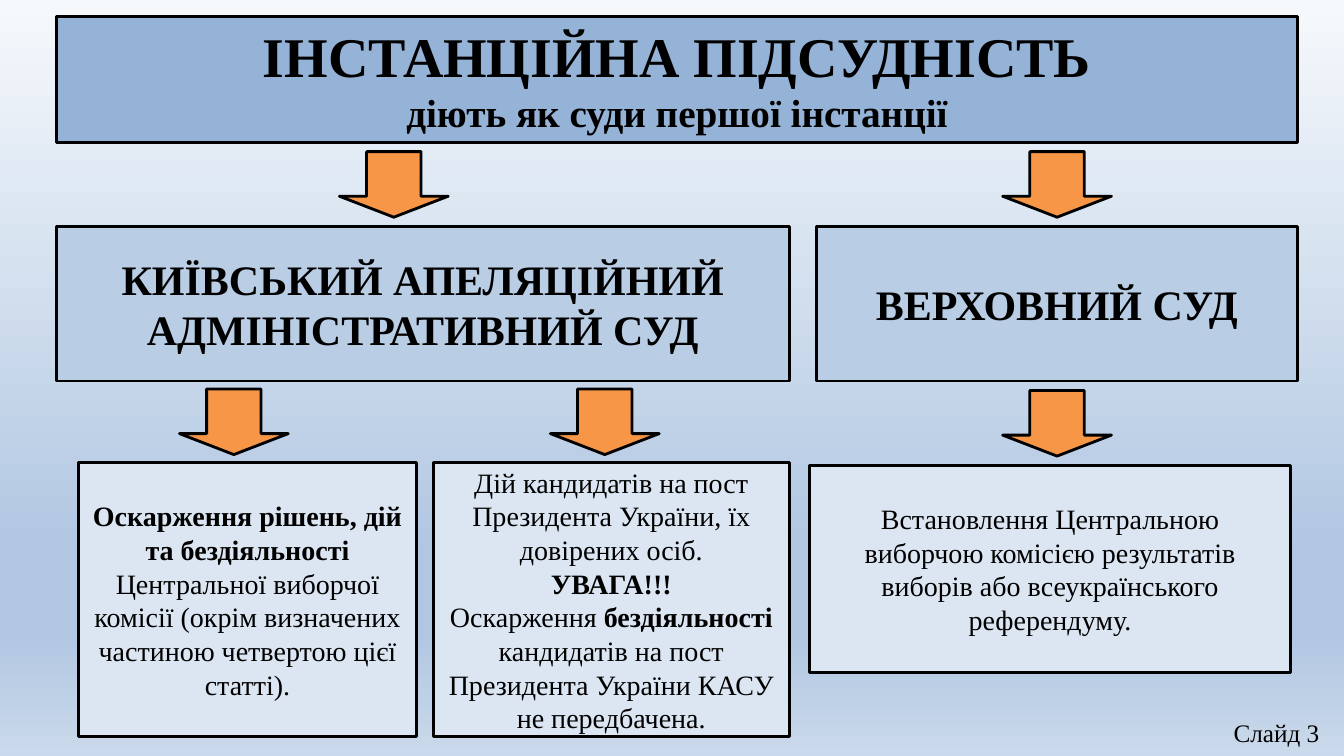
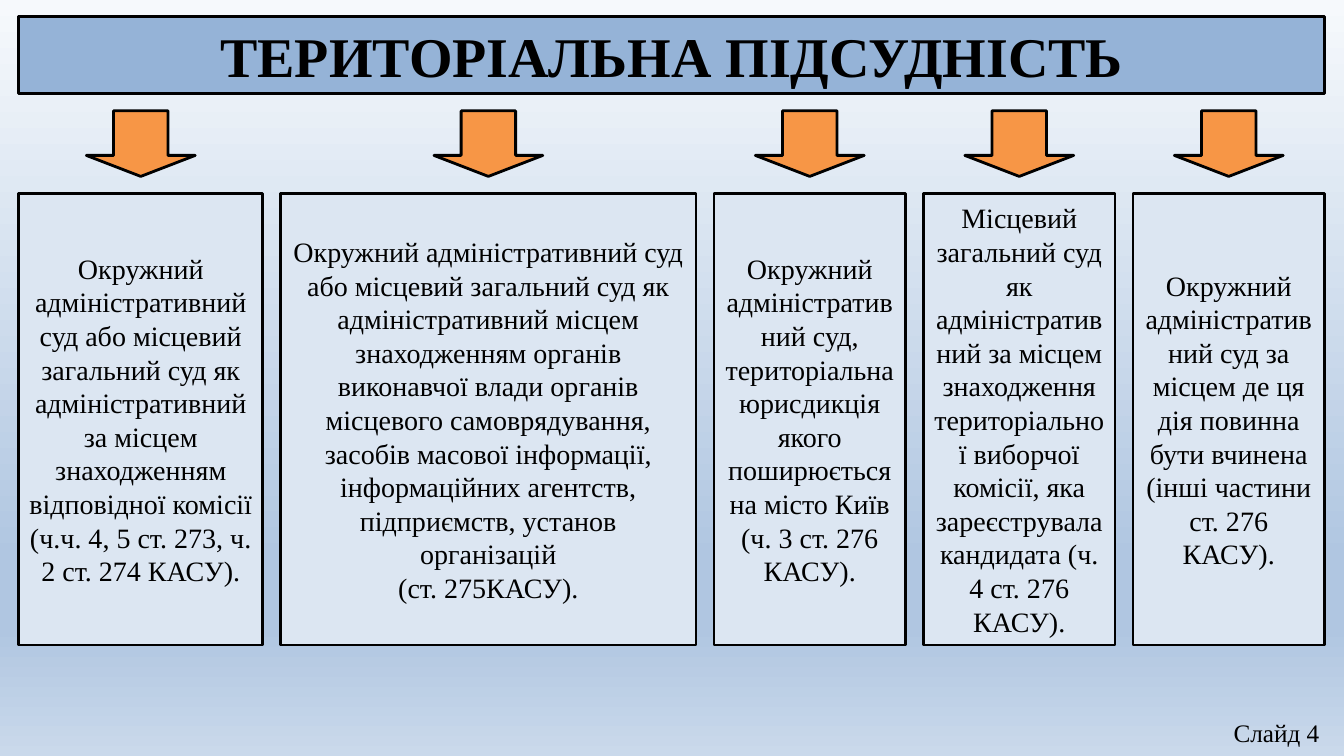
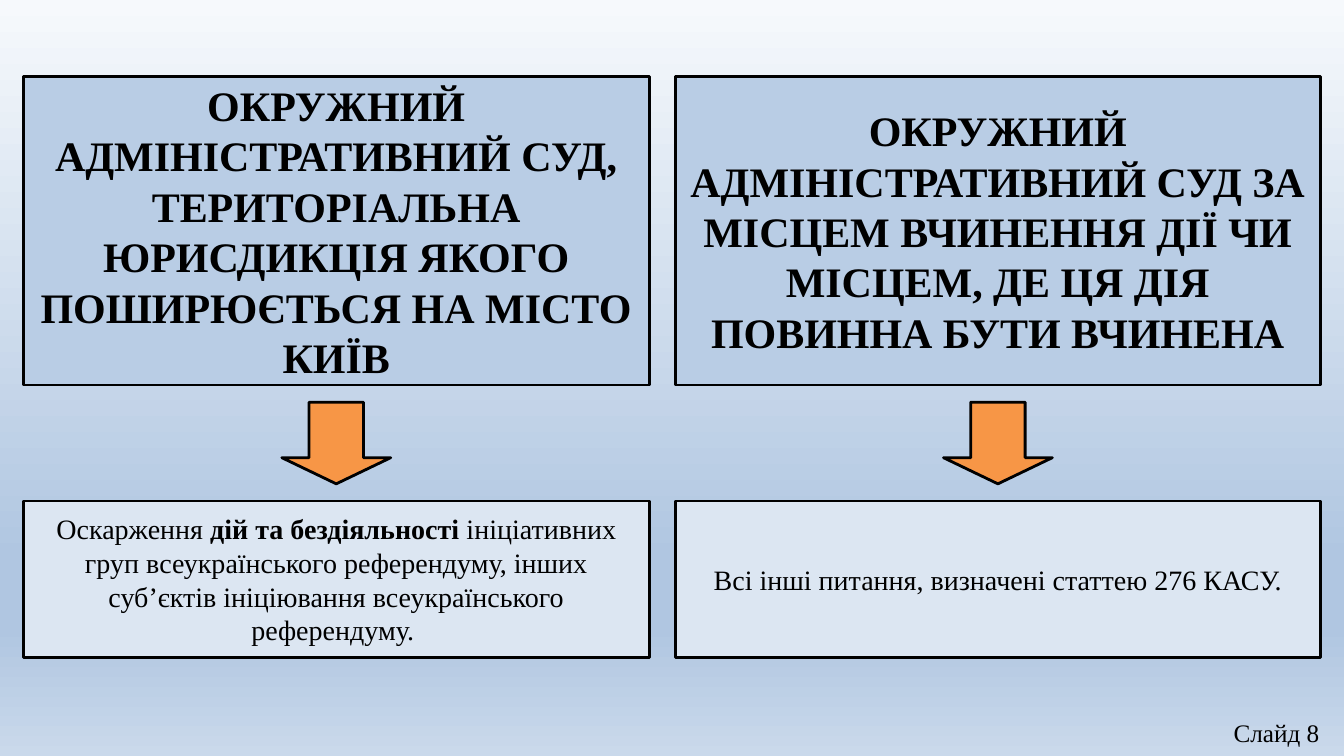
from dataclasses import dataclass
from itertools import accumulate

from lxml import etree
from pptx import Presentation, util as u
from pptx.dml.color import RGBColor
from pptx.enum import shapes, text
from pptx.oxml import ns


# Theme
@dataclass(frozen=True)
class Theme:
    font: str = "Times New Roman"
    ink: str = "000000"
    title_fill: str = "95B3D7"
    court_fill: str = "B9CDE5"
    case_fill: str = "DCE6F2"
    arrow_fill: str = "F79646"
    backdrop: tuple = ((0, "F6F9FC"), (74, "B0C6E1"), (83, "B0C6E1"), (100, "CAD9EB"))
    title_size: float = 40
    subtitle_size: float = 28
    court_size: float = 30
    case_size: float = 20
    footer_size: float = 18
    title_line: float = 2.25
    line: float = 2


THEME = Theme()
SLIDE_WIDTH, SLIDE_HEIGHT = u.Inches(13.33), u.Inches(7.5)
ARROW_WIDTH, ARROW_HEIGHT, TALL_ARROW = 8.1, 8.67, 10.8


@dataclass(frozen=True)
class Area:
    """Place and size in percent of the slide's width and height."""
    left: float
    top: float
    width: float
    height: float

    @property
    def center(self) -> float:
        return self.left + self.width / 2

    @property
    def bottom(self) -> float:
        return self.top + self.height

    def emu(self) -> tuple:
        return (int(SLIDE_WIDTH * self.left / 100), int(SLIDE_HEIGHT * self.top / 100),
                int(SLIDE_WIDTH * self.width / 100), int(SLIDE_HEIGHT * self.height / 100))


@dataclass(frozen=True)
class Line:
    """One paragraph; words between double asterisks are bold."""
    words: str
    size: float
    bold: bool = False


@dataclass(frozen=True)
class Panel:
    area: Area
    lines: tuple
    fill: str
    outline: float = THEME.line
    anchor: text.MSO_ANCHOR = text.MSO_ANCHOR.MIDDLE


# Kinds of panel
def title(area: Area, heading: str, *subtitles: str) -> Panel:
    lines = [Line(heading, THEME.title_size, True)]
    lines += [Line(words, THEME.subtitle_size, True) for words in subtitles]
    return Panel(area, tuple(lines), THEME.title_fill, THEME.title_line, text.MSO_ANCHOR.TOP)


def court(area: Area, name: str) -> Panel:
    return Panel(area, (Line(name, THEME.court_size, True),), THEME.court_fill)


def case(area: Area, *paragraphs: str) -> Panel:
    return Panel(area, tuple(Line(words, THEME.case_size) for words in paragraphs), THEME.case_fill)


# Drawing
def write(frame, lines: tuple, align: text.PP_ALIGN) -> None:
    frame.word_wrap = True
    for index, line in enumerate(lines):
        paragraph = frame.add_paragraph() if index else frame.paragraphs[0]
        paragraph.alignment = align
        font = paragraph.font
        font.name, font.size = THEME.font, u.Pt(line.size)
        font.color.rgb = RGBColor.from_string(THEME.ink)
        pieces = line.words.split("**")
        if len(pieces) == 1:
            font.bold = line.bold
        for position, piece in enumerate(pieces):
            if piece:
                run = paragraph.add_run()
                run.text = piece
                if len(pieces) > 1:
                    run.font.bold = position % 2 == 1


def draw_shape(slide, kind: shapes.MSO_SHAPE, area: Area, fill: str, outline: float):
    shape = slide.shapes.add_shape(kind, *area.emu())
    shape.shadow.inherit = False
    shape.fill.solid()
    shape.fill.fore_color.rgb = RGBColor.from_string(fill)
    shape.line.color.rgb = RGBColor.from_string(THEME.ink)
    shape.line.width = u.Pt(outline)
    return shape


def draw_panel(slide, panel: Panel) -> None:
    shape = draw_shape(slide, shapes.MSO_SHAPE.RECTANGLE, panel.area, panel.fill, panel.outline)
    shape.text_frame.vertical_anchor = panel.anchor
    write(shape.text_frame, panel.lines, text.PP_ALIGN.CENTER)


def draw_arrow(slide, upper: Area, lower: Area, center: float, height: float = ARROW_HEIGHT) -> None:
    """Put an arrow midway in the gap between two areas."""
    top = (upper.bottom + lower.top - height) / 2
    area = Area(center - ARROW_WIDTH / 2, top, ARROW_WIDTH, height)
    arrow = draw_shape(slide, shapes.MSO_SHAPE.DOWN_ARROW, area, THEME.arrow_fill, THEME.line)
    arrow.adjustments[0], arrow.adjustments[1] = 0.5, 0.32


def set_backdrop(master) -> None:
    fill = master.background.fill
    fill.gradient()
    fill.gradient_angle = 270
    stops = master.element.find(".//" + ns.qn("p:bgPr") + "//" + ns.qn("a:gsLst"))
    for stop in list(stops):
        stops.remove(stop)
    for percent, color in THEME.backdrop:
        stop = etree.SubElement(stops, ns.qn("a:gs"), pos=str(percent * 1000))
        etree.SubElement(stop, ns.qn("a:srgbClr"), val=color)


def add_slide(deck, number: int, panels: list):
    slide = deck.slides.add_slide(deck.slide_layouts[6])
    for panel in panels:
        draw_panel(slide, panel)
    footer = slide.shapes.add_textbox(*Area(91.05, 94.27, 8.93, 5.73).emu())
    write(footer.text_frame, (Line(f"Слайд {number}", THEME.footer_size),), text.PP_ALIGN.LEFT)
    return slide


# Slides
def add_instance_slide(deck) -> None:
    heading = title(Area(4.2, 2.13, 92.35, 16.67),
                    "ІНСТАНЦІЙНА ПІДСУДНІСТЬ", "діють як суди першої інстанції")
    appeal = court(Area(4.2, 30, 54.53, 20.4), "КИЇВСЬКИЙ АПЕЛЯЦІЙНИЙ АДМІНІСТРАТИВНИЙ СУД")
    supreme = court(Area(60.75, 30, 35.8, 20.4), "ВЕРХОВНИЙ СУД")
    commission = case(
        Area(5.85, 61.2, 25.13, 36.27),
        "**Оскарження рішень, дій та бездіяльності **Центральної виборчої комісії "
        "(окрім визначених частиною четвертою цієї статті).")
    candidates = case(
        Area(32.25, 61.2, 26.48, 36.27),
        "Дій кандидатів на пост Президента України, їх довірених осіб.",
        "**УВАГА!!!**",
        "Оскарження** бездіяльності **кандидатів на пост Президента України КАСУ не передбачена.")
    results = case(
        Area(60.23, 61.6, 35.8, 27.33),
        "Встановлення Центральною виборчою комісією результатів виборів "
        "або всеукраїнського референдуму.")
    slide = add_slide(deck, 3, [heading, appeal, supreme, commission, candidates, results])
    for upper, lower, center in ((heading, appeal, 29.3), (heading, supreme, supreme.area.center),
                                 (appeal, commission, 17.4), (appeal, candidates, 45),
                                 (supreme, results, supreme.area.center)):
        draw_arrow(slide, upper.area, lower.area, center)


def add_territory_slide(deck) -> None:
    heading = title(Area(1.4, 2.13, 97.15, 10.27), "ТЕРИТОРІАЛЬНА ПІДСУДНІСТЬ")
    columns = (
        (18.15, ("Окружний адміністративний суд або місцевий загальний суд як адміністративний "
                 "за місцем знаходженням відповідної комісії (ч.ч. 4, 5 ст. 273, ч. 2 ст. 274 КАСУ).",)),
        (30.9, ("Окружний адміністративний суд або місцевий загальний суд як адміністративний "
                "місцем знаходженням органів виконавчої влади органів місцевого самоврядування, "
                "засобів масової інформації, інформаційних агентств, підприємств, установ організацій",
                "(ст. 275КАСУ).")),
        (14.25, ("Окружний адміністративний суд, територіальна юрисдикція якого поширюється "
                 "на місто Київ (ч. 3 ст. 276 КАСУ).",)),
        (14.25, ("Місцевий загальний суд як адміністративний за місцем знаходження територіальної "
                 "виборчої комісії, яка зареєструвала кандидата (ч. 4 ст. 276 КАСУ).",)),
        (14.25, ("Окружний адміністративний суд за місцем де ця дія повинна бути вчинена "
                 "(інші частини ст. 276 КАСУ).",)),
    )
    widths = [width for width, _ in columns]
    gap = (heading.area.width - sum(widths)) / (len(widths) - 1)
    lefts = accumulate((width + gap for width in widths), initial=heading.area.left)
    courts = [case(Area(left, 25.6, width, 59.73), *paragraphs)
              for left, (width, paragraphs) in zip(lefts, columns)]
    slide = add_slide(deck, 4, [heading, *courts])
    for panel in courts:
        draw_arrow(slide, heading.area, panel.area, panel.area.center)


def add_referendum_slide(deck) -> None:
    columns = (
        (1.73, 46.58,
         "ОКРУЖНИЙ АДМІНІСТРАТИВНИЙ СУД, ТЕРИТОРІАЛЬНА ЮРИСДИКЦІЯ ЯКОГО ПОШИРЮЄТЬСЯ НА МІСТО КИЇВ",
         "Оскарження **дій та бездіяльності **ініціативних груп всеукраїнського референдуму, "
         "інших суб’єктів ініціювання всеукраїнського референдуму. "),
        (50.25, 48,
         "ОКРУЖНИЙ АДМІНІСТРАТИВНИЙ СУД ЗА МІСЦЕМ ВЧИНЕННЯ ДІЇ ЧИ МІСЦЕМ, ДЕ ЦЯ ДІЯ ПОВИННА БУТИ ВЧИНЕНА",
         "Всі інші питання, визначені статтею 276 КАСУ."),
    )
    pairs = [(court(Area(left, 10.13, width, 40.8), name),
              case(Area(left, 66.27, width, 20.67), matter))
             for left, width, name, matter in columns]
    slide = add_slide(deck, 8, [panel for pair in pairs for panel in pair])
    for upper, lower in pairs:
        draw_arrow(slide, upper.area, lower.area, upper.area.center, TALL_ARROW)


def main() -> None:
    deck = Presentation()
    deck.slide_width, deck.slide_height = SLIDE_WIDTH, SLIDE_HEIGHT
    set_backdrop(deck.slide_master)
    add_instance_slide(deck)
    add_territory_slide(deck)
    add_referendum_slide(deck)
    deck.save("out.pptx")


if __name__ == "__main__":
    main()
